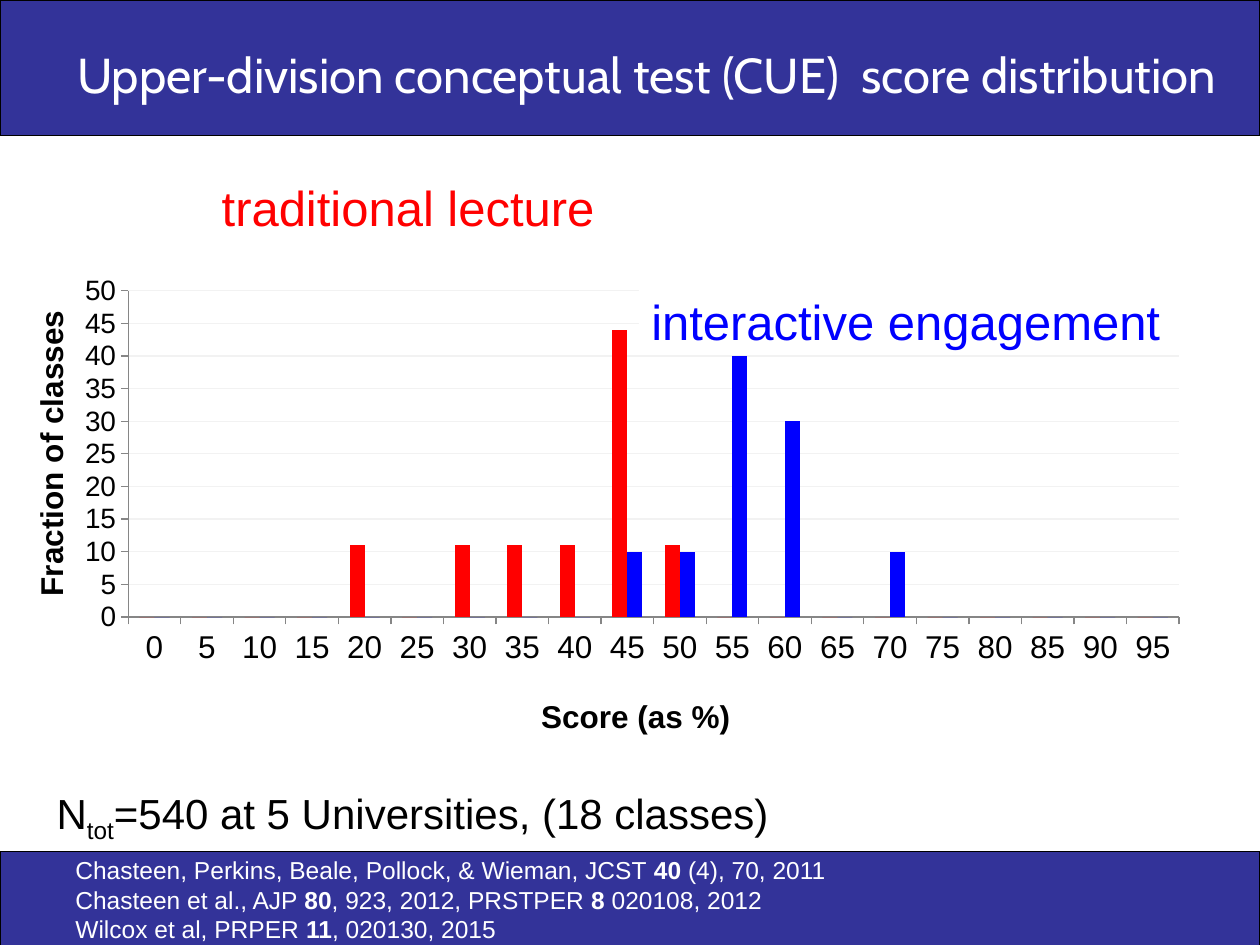
from lxml import etree
from pptx import Presentation
from pptx.chart.data import CategoryChartData
from pptx.dml.color import RGBColor
from pptx.enum.chart import XL_CHART_TYPE, XL_TICK_MARK
from pptx.enum.shapes import MSO_SHAPE
from pptx.enum.text import MSO_ANCHOR, PP_ALIGN
from pptx.oxml import parse_xml
from pptx.util import Cm, Pt

COLUMNS = XL_CHART_TYPE.COLUMN_CLUSTERED
RECT = MSO_SHAPE.RECTANGLE
TOP, MIDDLE = MSO_ANCHOR.TOP, MSO_ANCHOR.MIDDLE
LEFT, CENTER = PP_ALIGN.LEFT, PP_ALIGN.CENTER
OUTSIDE = XL_TICK_MARK.OUTSIDE
CHART_NS = "http://schemas.openxmlformats.org/drawingml/2006/chart"


class Theme:
    band, black, white = "333399", "000000", "FFFFFF"
    lecture, engagement = "FF0000", "0000FF"
    grid, axis = "F2F2F2", "868686"
    body_font, title_font = "Arial", "Cabin"
    heading, note, axis_big, axis_small, source = 28, 24, 18, 16, 14


# Content: a run is (text, style), and "\n" is a line break
TITLE = "Upper-division conceptual test (CUE)  score distribution"
SAMPLE = [[("N", ""), ("tot", "sub"),
           ("=540 at 5 Universities, (18 classes)", "")]]
SOURCES = [
    [("Chasteen, Perkins, Beale, Pollock, & Wieman, JCST ", ""), ("40", "bold"),
     (" (4), 70, 2011", ""), ("\n", ""),
     ("Chasteen et al., AJP ", ""), ("80", "bold"),
     (", 923, 2012, PRSTPER ", ""), ("8", "bold"), (" 020108, 2012", "")],
    [("Wilcox et al, PRPER ", ""), ("11", "bold"), (", 020130, 2015", "")],
]
SCORES = range(0, 100, 5)
# Series: name, colour, {score: percent of classes}
SERIES = [
    ("Series 1", Theme.lecture, {20: 11, 30: 11, 35: 11, 40: 11, 45: 44, 50: 11}),
    ("Series 2", Theme.engagement, {45: 10, 50: 10, 55: 40, 60: 30, 70: 10}),
]
# Legend labels: text, colour, box in cm
LABELS = [
    ("traditional lecture", Theme.lecture, (4.22, 3.53, 9.6, 1.27)),
    ("interactive engagement", Theme.engagement, (12.88, 5.84, 11.05, 1.27)),
]
BANDS = [(0, 0, 25.4, 2.74), (0, 17.17, 25.4, 1.9)]


def rgb(value):
    return RGBColor.from_string(value)


def set_font(font, size, color, name=Theme.body_font, bold=False):
    font.size, font.name, font.bold = Pt(size), name, bold
    font.color.rgb = rgb(color)


def add_rect(box, fill, line=None):
    s = slide.shapes.add_shape(RECT, *map(Cm, box))
    s.shadow.inherit = False
    s.fill.solid()
    s.fill.fore_color.rgb = rgb(fill)
    if line:
        s.line.color.rgb = rgb(line)
        s.line.width = Pt(0.75)
    else:
        s.line.fill.background()
    return s


def add_text_box(box, wrap=True):
    s = slide.shapes.add_textbox(*map(Cm, box))
    s.text_frame.word_wrap = wrap
    return s


def write(s, paragraphs, size, color, name=Theme.body_font,
          align=LEFT, anchor=TOP, indent=0):
    tf = s.text_frame
    tf.vertical_anchor = anchor
    for i, runs in enumerate(paragraphs):
        p = tf.add_paragraph() if i else tf.paragraphs[0]
        p.alignment = align
        if indent:
            p._p.get_or_add_pPr().set("marL", str(Cm(indent)))
        for text, style in runs:
            if text == "\n":
                p.add_line_break()
                continue
            r = p.add_run()
            r.text = text
            set_font(r.font, size, color, name, style == "bold")
            if style == "sub":
                r.font._element.set("baseline", "-25000")


def manual_layout(**values):
    """Layout element with positions as fractions of the chart."""
    layout = etree.Element(f"{{{CHART_NS}}}layout", nsmap={"c": CHART_NS})
    manual = etree.SubElement(layout, f"{{{CHART_NS}}}manualLayout")
    for tag, value in values.items():
        etree.SubElement(manual, f"{{{CHART_NS}}}{tag}").set("val", str(value))
    return parse_xml(etree.tostring(layout))


def style_axis(axis, title, size, x, y):
    axis.major_tick_mark = OUTSIDE
    axis.format.line.color.rgb = rgb(Theme.axis)
    set_font(axis.tick_labels.font, size, Theme.black)
    r = axis.axis_title.text_frame.paragraphs[0].add_run()
    r.text = title
    set_font(r.font, Theme.axis_big, Theme.black, bold=True)
    element = axis.axis_title._element
    for old in element.findall(f"{{{CHART_NS}}}layout"):
        element.remove(old)
    element.find(f"{{{CHART_NS}}}tx").addnext(
        manual_layout(xMode="edge", yMode="edge", x=x, y=y))


def add_score_chart(box):
    data = CategoryChartData()
    data.categories = [str(score) for score in SCORES]
    for name, _, shares in SERIES:
        data.add_series(name, [shares.get(score, 0) for score in SCORES])
    chart = slide.shapes.add_chart(COLUMNS, *map(Cm, box), data).chart
    chart.has_legend = chart.has_title = False
    set_font(chart.font, Theme.axis_small, Theme.black)

    plot = chart.plots[0]
    plot.gap_width, plot.overlap, plot.vary_by_categories = 150, 0, False
    for series, (_, color, _) in zip(plot.series, SERIES):
        series.format.fill.solid()
        series.format.fill.fore_color.rgb = rgb(color)

    style_axis(chart.category_axis, "Score (as %)", Theme.axis_big, 0.43, 0.86)
    values = chart.value_axis
    style_axis(values, "Fraction of classes", Theme.axis_small, 0.02, 0.25)
    values.minimum_scale, values.maximum_scale, values.major_unit = 0, 50, 5
    grid = values.major_gridlines.format.line
    grid.color.rgb, grid.width = rgb(Theme.grid), Pt(0.75)

    area = chart._chartSpace.chart.plotArea
    for old in area.findall(f"{{{CHART_NS}}}layout"):
        area.remove(old)
    area.insert(0, manual_layout(layoutTarget="inner", xMode="edge", yMode="edge",
                                 x=0.103, y=0.227, w=0.844, h=0.517))


prs = Presentation()
prs.slide_width, prs.slide_height = Cm(25.4), Cm(19.05)
slide = prs.slides.add_slide(prs.slide_layouts[6])

# Header and footer bands
for band in BANDS:
    add_rect(band, Theme.band, Theme.black)

# Sample size, chart and its labels
write(add_text_box((0.89, 15.75, 15.09, 1.27), wrap=False), SAMPLE,
      Theme.note, Theme.black)
add_score_chart((0, 2.97, 25.1, 12.73))
for text, color, box in LABELS:
    write(add_rect(box, Theme.white), [[(text, "")]], Theme.heading, color,
          anchor=MIDDLE)

# Title and sources
write(add_text_box((0.66, 0.43, 24.74, 2.11)), [[(TITLE, "")]], Theme.heading,
      Theme.white, Theme.title_font, CENTER, MIDDLE)
write(add_text_box((0, 17.12, 18.08, 2.06)), SOURCES, Theme.source, Theme.white,
      indent=1.27)

prs.save("out.pptx")
